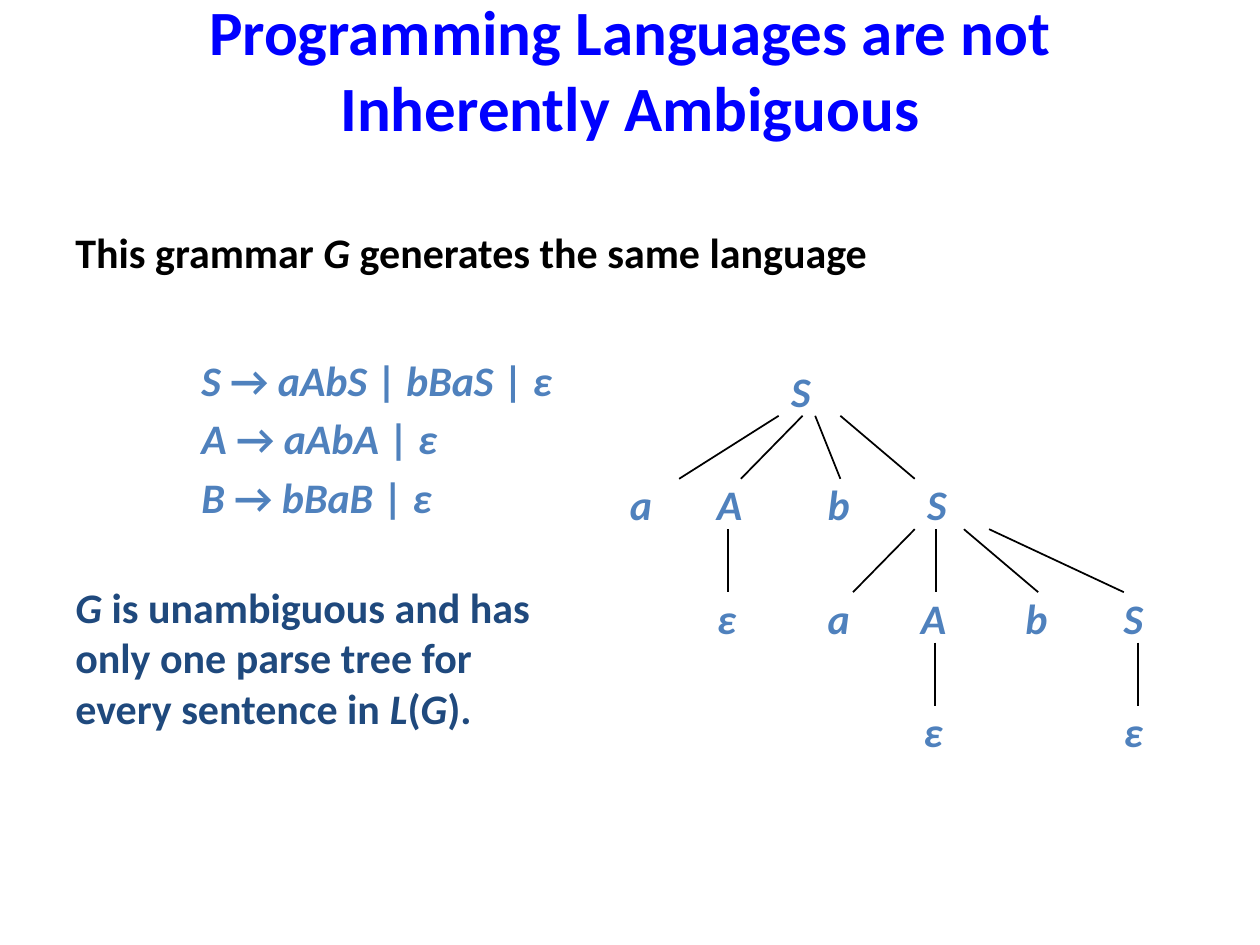
from pptx import Presentation
from pptx import util as u
from pptx.dml.color import RGBColor
from pptx.enum import shapes, text
from pptx.oxml.ns import qn
from lxml import etree

BLUE = RGBColor(0x00, 0x00, 0xFF)
BLACK = RGBColor(0x00, 0x00, 0x00)
SKY = RGBColor(0x4F, 0x81, 0xBD)
NAVY = RGBColor(0x1F, 0x49, 0x7D)

# The tree's grid, in inches: rows of labels with a gap for the branches
TOP, ROW, HIGH, WIDE = 2.9, 0.9, 0.4, 0.49


def style(font, size, color):
    font.name = "Calibri"
    font.size = u.Pt(size)
    font.bold = True
    font.color.rgb = color


def fill(para, line):
    """Write a line in which the parts between asterisks are italic."""
    for i, part in enumerate(line.split("*")):
        if part:
            run = para.add_run()
            run.text = part
            run.font.italic = i % 2 == 1


deck = Presentation()
deck.slide_width, deck.slide_height = u.Inches(10), u.Inches(7.5)
slide = deck.slides.add_slide(deck.slide_layouts[5])

title = slide.shapes.title
title.left, title.top = 0, u.Inches(0.08)
title.width, title.height = deck.slide_width, u.Inches(0.92)
frame = title.text_frame
frame.text = "Programming Languages are not\vInherently Ambiguous"
frame.vertical_anchor = text.MSO_ANCHOR.MIDDLE
frame.auto_size = text.MSO_AUTO_SIZE.NONE
frame.paragraphs[0].alignment = text.PP_ALIGN.CENTER
style(frame.paragraphs[0].font, 36, BLUE)

# Text, colour, left margin in inches, space before in points
lines = [
    ("This grammar *G* generates the same language", BLACK, 0, 4.8),
    ("*S* → *aAbS* | *bBaS* | *ε*", SKY, 1, 44),
    ("*A* → *aAbA* | *ε*", SKY, 1, 4.8),
    ("*B* → *bBaB* | *ε*", SKY, 1, 4.8),
    ("*G* is unambiguous and has", NAVY, 0, 34),
    ("only one parse tree for", NAVY, 0, 0),
    ("every sentence in *L*(*G*).", NAVY, 0, 0),
]
body = slide.shapes.add_textbox(
    u.Inches(0.5), u.Inches(1.75), u.Inches(9), u.Inches(4.95)).text_frame
body.word_wrap = True
for i, (line, color, left, gap) in enumerate(lines):
    para = body.add_paragraph() if i else body.paragraphs[0]
    fill(para, line)
    style(para.font, 24, color)
    para.space_before = u.Pt(gap)
    para._p.get_or_add_pPr().set("marL", str(u.Inches(left)))

# Labels of the parse tree, row by row, with their left edges
tree = [
    [("S", 6.18)],
    [("a", 4.9), ("A", 5.59), ("b", 6.47), ("S", 7.26)],
    [("ε", 5.59), ("a", 6.47), ("A", 7.21), ("b", 8.04), ("S", 8.82)],
    [("ε", 7.23), ("ε", 8.82)],
]
for r, labels in enumerate(tree):
    for label, x in labels:
        box = slide.shapes.add_textbox(
            u.Inches(x), u.Inches(TOP + r * ROW), u.Inches(WIDE), u.Inches(HIGH))
        frame = box.text_frame
        frame.word_wrap = False
        frame.vertical_anchor = text.MSO_ANCHOR.MIDDLE
        frame.text = label
        style(frame.paragraphs[0].font, 24, SKY)
        frame.paragraphs[0].font.italic = True

# Branches below each row: x at the parent, x at the child
branches = [
    [(6.18, 5.39), (6.37, 5.88), (6.47, 6.67), (6.67, 7.26)],
    [(5.78, 5.78), (7.26, 6.77), (7.43, 7.43), (7.65, 8.24), (7.85, 8.92)],
    [(7.42, 7.42), (9.03, 9.03)],
]
for r, pairs in enumerate(branches):
    start, end = TOP + r * ROW + HIGH, TOP + (r + 1) * ROW
    for x, to in pairs:
        branch = slide.shapes.add_connector(
            shapes.MSO_CONNECTOR.STRAIGHT,
            u.Inches(x), u.Inches(start), u.Inches(to), u.Inches(end))
        branch.line.color.rgb = BLACK
        branch.line.width = u.Pt(1)
        etree.SubElement(branch._element.spPr, qn("a:effectLst"))

deck.save("out.pptx")
